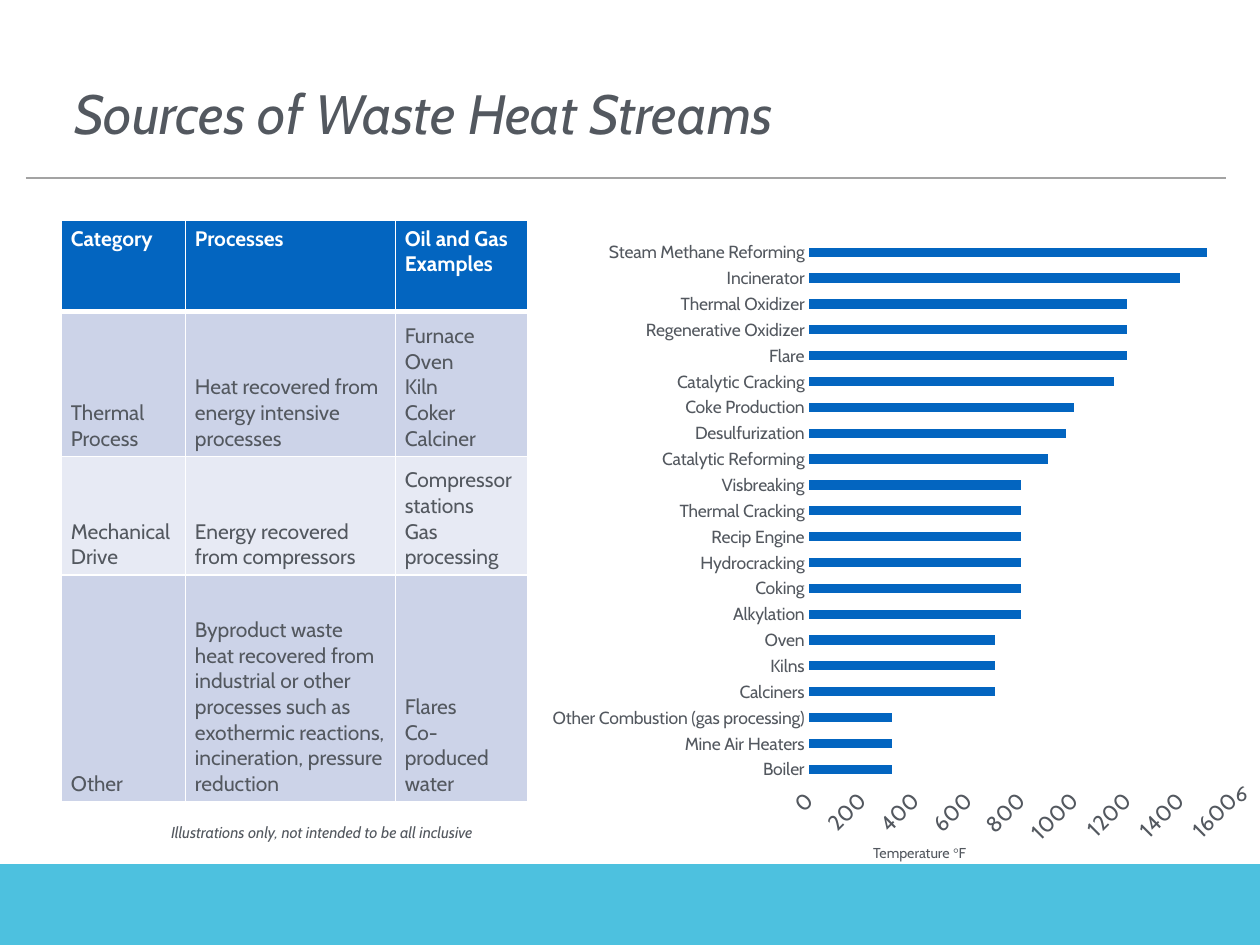
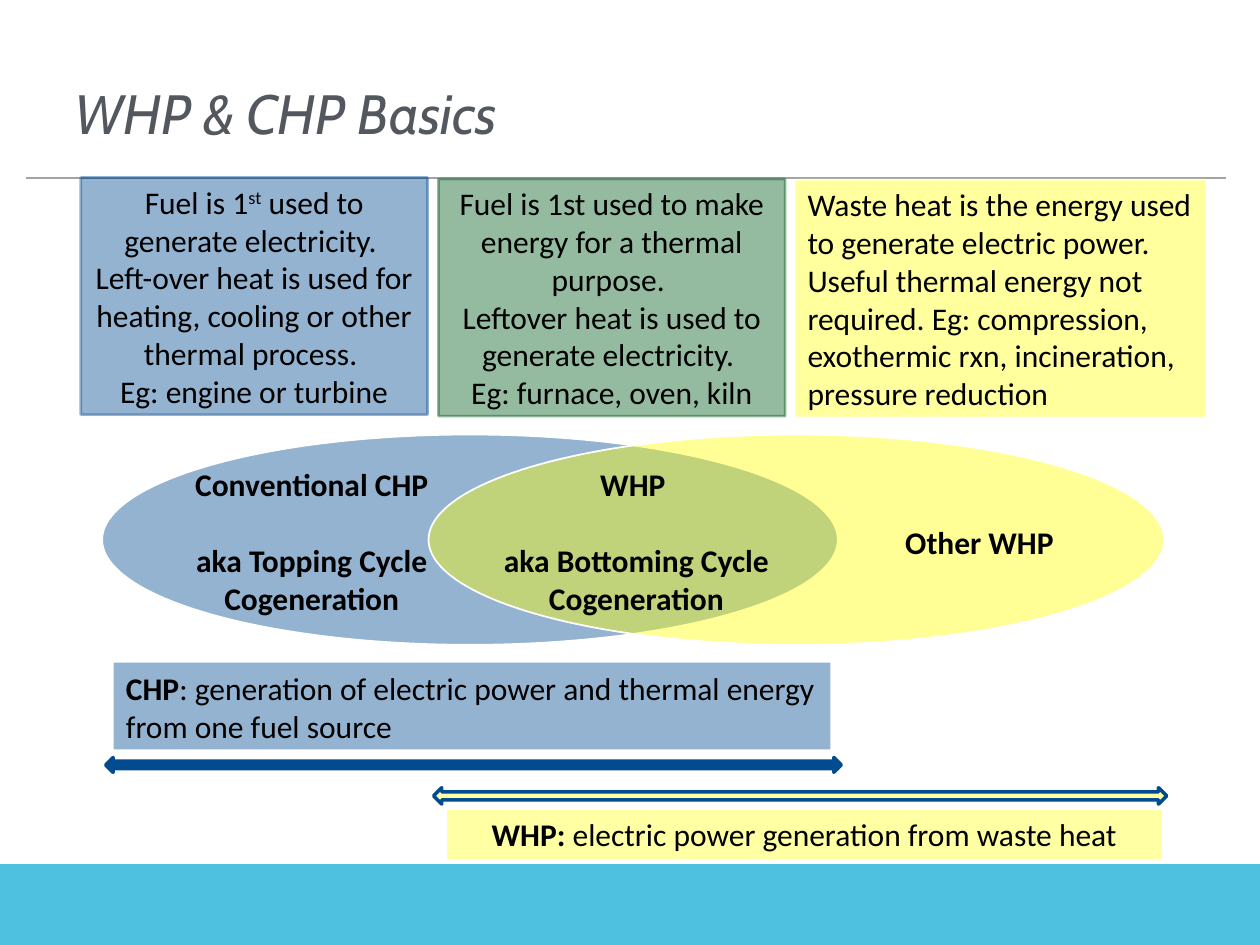
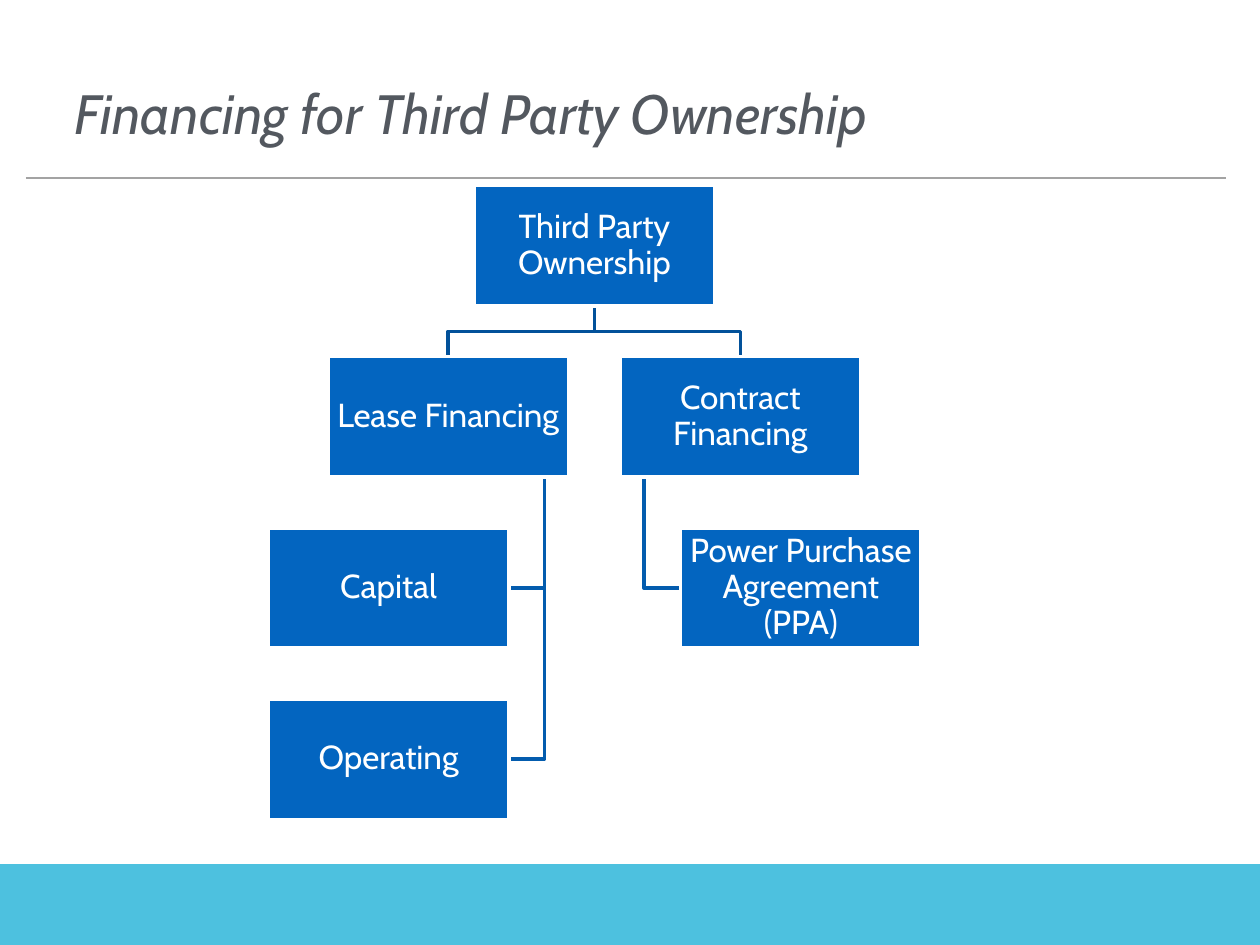
from dataclasses import dataclass
from typing import NamedTuple, Optional, Sequence, Union

from lxml.etree import SubElement
from pptx import Presentation
from pptx.chart.data import CategoryChartData
from pptx.dml.color import RGBColor
from pptx.enum.chart import XL_CHART_TYPE as ChartType, XL_TICK_MARK as TickMark
from pptx.enum.shapes import MSO_CONNECTOR as Connector, MSO_SHAPE as Preset
from pptx.enum.text import MSO_ANCHOR as Anchor, MSO_AUTO_SIZE as AutoSize, PP_ALIGN as Align
from pptx.oxml.ns import qn
from pptx.util import Cm, Pt

HEADING, BODY = "Cabin", "Calibri"
GREY, WHITE, BLACK = "53585F", "FFFFFF", "000000"
BLUE, NAVY, NAVY_LINE = "0365C0", "024C90", "024B8E"
GREEN, YELLOW = "005C1C", "FFFF00"
BAND, RULE = "4DC1DF", "A3A3A3"
TREE_TOP, TREE_SIDE = "02519A", "035CAE"
ROW_TINTS = ("CCD3E8", "E7EAF4")


class Run(NamedTuple):
    text: str
    bold: Optional[bool] = None
    font: Optional[str] = None
    raised: bool = False


Paragraphs = Sequence[Union[str, Sequence[Run]]]


class Box(NamedTuple):
    """Left, top, width and height in centimetres."""
    left: float
    top: float
    width: float
    height: float

    def lengths(self) -> list:
        return [Cm(value) for value in self]


@dataclass
class Panel:
    box: Box
    color: str
    opacity: int
    paragraphs: Paragraphs = ()
    preset: Preset = Preset.RECTANGLE
    line: Optional[str] = None
    line_width: float = 1
    line_opacity: int = 100
    align: Align = Align.CENTER
    anchor: Anchor = Anchor.MIDDLE


@dataclass
class Label:
    box: Box
    paragraphs: Paragraphs


@dataclass
class Node:
    text: str
    left: float
    level: int
    parent: Optional[str] = None


def rgb(color: str) -> RGBColor:
    return RGBColor.from_string(color)


def paint(fill, color: str, opacity: int = 100) -> None:
    fill.solid()
    fill.fore_color.rgb = rgb(color)
    if opacity < 100:
        color_element = fill._xPr.find(qn("a:solidFill"))[0]
        SubElement(color_element, qn("a:alpha"), val=str(opacity * 1000))


def outline(line, color: Optional[str], width: float = 1, opacity: int = 100) -> None:
    if color is None:
        line.fill.background()
        return
    paint(line.fill, color, opacity)
    line.width = Pt(width)


def write_text(frame, paragraphs: Paragraphs, *, size: float, font: str = HEADING,
               color: str = GREY, bold: bool = False, italic: bool = False,
               align: Align = Align.LEFT, anchor: Anchor = Anchor.TOP,
               line_spacing: float = 1.0, gap: float = 0) -> None:
    """Fill a text frame; gap is the space in points between paragraphs."""
    frame.word_wrap = True
    frame.vertical_anchor = anchor
    for index, content in enumerate(paragraphs):
        paragraph = frame.paragraphs[0] if index == 0 else frame.add_paragraph()
        paragraph.alignment = align
        paragraph.line_spacing = line_spacing
        paragraph.space_before = Pt(gap if index else 0)
        for part in [Run(content)] if isinstance(content, str) else content:
            run = paragraph.add_run()
            run.text = part.text
            run.font.name = part.font or font
            run.font.size = Pt(size)
            run.font.bold = bold if part.bold is None else part.bold
            run.font.italic = italic
            run.font.color.rgb = rgb(color)
            if part.raised:
                run._r.get_or_add_rPr().set("baseline", "30000")


def add_label(slide, box: Box, paragraphs: Paragraphs, **text_format) -> None:
    frame = slide.shapes.add_textbox(*box.lengths()).text_frame
    write_text(frame, paragraphs, **text_format)


def add_panel(slide, panel: Panel, **text_format):
    shape = slide.shapes.add_shape(panel.preset, *panel.box.lengths())
    shape.shadow.inherit = False
    paint(shape.fill, panel.color, panel.opacity)
    outline(shape.line, panel.line, panel.line_width, panel.line_opacity)
    if panel.paragraphs:
        write_text(shape.text_frame, panel.paragraphs, align=panel.align,
                   anchor=panel.anchor, **text_format)
    return shape


def add_titled_slide(presentation, title: str):
    """Add a slide with the shared title style, rule and bottom band."""
    slide = presentation.slides.add_slide(presentation.slide_layouts[5])
    add_panel(slide, Panel(Box(0, 17.42, 25.4, 1.63), BAND, 100))
    rule = slide.shapes.add_connector(Connector.STRAIGHT, Cm(0.52), Cm(3.59), Cm(24.71), Cm(3.59))
    outline(rule.line, RULE)
    SubElement(rule._element.spPr, qn("a:effectLst"))
    heading = slide.shapes.title
    heading.left, heading.top, heading.width, heading.height = Box(1.24, 1.04, 21.44, 2.44).lengths()
    heading.text_frame.auto_size = AutoSize.NONE
    write_text(heading.text_frame, [title], size=31.6, italic=True, anchor=Anchor.MIDDLE)
    return slide


# Sources of waste heat

TEMPERATURES = {
    "Boiler": 310, "Mine Air Heaters": 310, "Other Combustion (gas processing)": 310,
    "Calciners": 700, "Kilns": 700, "Oven": 700, "Alkylation": 800, "Coking": 800,
    "Hydrocracking": 800, "Recip Engine": 800, "Thermal Cracking": 800,
    "Visbreaking": 800, "Catalytic Reforming": 900, "Desulfurization": 970,
    "Coke Production": 1000, "Catalytic Cracking": 1150, "Flare": 1200,
    "Regenerative Oxidizer": 1200, "Thermal Oxidizer": 1200, "Incinerator": 1400,
    "Steam Methane Reforming": 1500,
}

SOURCE_ROWS = [
    (["Category"], ["Processes"], ["Oil and Gas Examples"]),
    (["Thermal Process"], ["Heat recovered from energy intensive processes"],
     ["Furnace Oven", "Kiln", "Coker", "Calciner"]),
    (["Mechanical Drive"], ["Energy recovered from compressors"],
     ["Compressor stations", "Gas processing"]),
    (["Other"],
     ["Byproduct waste heat recovered from industrial or other processes such as "
      "exothermic reactions, incineration, pressure reduction"],
     ["Flares", "Co-produced water"]),
]


def add_temperature_chart(slide, box: Box) -> None:
    data = CategoryChartData()
    data.categories = list(TEMPERATURES)
    data.add_series("Series 1", list(TEMPERATURES.values()))
    chart = slide.shapes.add_chart(ChartType.BAR_CLUSTERED, *box.lengths(), data).chart
    chart.has_legend = chart.has_title = False
    chart.font.name, chart.font.size = HEADING, Pt(12.5)
    chart.font.color.rgb = rgb(GREY)
    plot = chart.plots[0]
    plot.gap_width = 182
    plot.vary_by_categories = False
    paint(plot.series[0].format.fill, BLUE)

    categories, values = chart.category_axis, chart.value_axis
    # The longest category name must fit between the table and the bars.
    for axis, size in ((categories, 10), (values, 12.5)):
        axis.major_tick_mark = axis.minor_tick_mark = TickMark.NONE
        font = axis.tick_labels.font
        font.name, font.size = HEADING, Pt(size)
        font.color.rgb = rgb(GREY)
    outline(categories.format.line, WHITE, 0.75)
    outline(values.format.line, None)
    values.minimum_scale, values.maximum_scale, values.major_unit = 0, 1600, 200
    outline(values.major_gridlines.format.line, WHITE, 0.75)
    values._element.find(qn("c:txPr")).find(qn("a:bodyPr")).set("rot", "-2700000")

    skip = SubElement(categories._element, qn("c:tickLblSkip"), val="2")
    categories._element.find(qn("c:noMultiLvlLbl")).addprevious(skip)
    place_plot(chart, Box(0.44, 0.02, 0.53, 0.86))


def place_plot(chart, share: Box) -> None:
    """Fix the inner plot area as shares of the chart's size."""
    plot_area = chart._chartSpace.chart.plotArea
    layout = plot_area.find(qn("c:layout"))
    if layout is None:
        layout = SubElement(plot_area, qn("c:layout"))
        plot_area.insert(0, layout)
    manual = SubElement(layout, qn("c:manualLayout"))
    settings = {"layoutTarget": "inner", "xMode": "edge", "yMode": "edge",
                "x": share.left, "y": share.top, "w": share.width, "h": share.height}
    for name, value in settings.items():
        SubElement(manual, qn(f"c:{name}"), val=str(value))


def add_borders(cell, bottom_width: float) -> None:
    properties = cell._tc.get_or_add_tcPr()
    widths = {"lnL": 1, "lnR": 1, "lnT": 1, "lnB": bottom_width}
    for index, (name, width) in enumerate(widths.items()):
        border = SubElement(properties, qn(f"a:{name}"), w=str(Pt(width)))
        SubElement(SubElement(border, qn("a:solidFill")), qn("a:srgbClr"), val=WHITE)
        properties.insert(index, border)


def add_source_table(slide, box: Box) -> None:
    column_widths, row_heights = (2.5, 4.23, 2.67), (1.83, 2.92, 2.39, 4.57)
    table = slide.shapes.add_table(len(row_heights), len(column_widths), *box.lengths()).table
    for column, width in zip(table.columns, column_widths):
        column.width = Cm(width)
    for row_index, (row, height, contents) in enumerate(zip(table.rows, row_heights, SOURCE_ROWS)):
        row.height = Cm(height)
        header = row_index == 0
        for cell, paragraphs in zip(row.cells, contents):
            cell.margin_left = cell.margin_right = Cm(0.19)
            cell.margin_top = cell.margin_bottom = Cm(0.1)
            write_text(cell.text_frame, paragraphs, size=12, bold=header,
                       color=WHITE if header else GREY)
            cell.vertical_anchor = Anchor.TOP if header else Anchor.BOTTOM
            paint(cell.fill, BLUE if header else ROW_TINTS[(row_index - 1) % 2])
            add_borders(cell, 3 if header else 1)


def build_sources(presentation) -> None:
    slide = add_titled_slide(presentation, "Sources of Waste Heat Streams")
    add_label(slide, Box(19.69, 15.62, 5.71, 0.76), ["6"], size=12, align=Align.RIGHT)
    add_label(slide, Box(3.2, 16.46, 7.72, 0.64),
              ["Illustrations only, not intended to be all inclusive"], size=9, italic=True)
    add_temperature_chart(slide, Box(9.22, 4.57, 16.13, 12.73))
    add_source_table(slide, Box(1.24, 4.45, 9.4, 11.71))
    add_label(slide, Box(17.35, 16.89, 2.64, 0.61),
              [[Run("Temperature "), Run("°", font="Times New Roman"), Run("F")]], size=8.2)


# WHP and CHP basics

VENN_PANELS = [
    Panel(Box(2.29, 13.36, 14.45, 1.75), NAVY, 42,
          [[Run("CHP", bold=True),
            Run(": generation of electric power and thermal energy from one fuel source")]],
          align=Align.LEFT, anchor=Anchor.TOP),
    Panel(Box(2.06, 8.76, 14.83, 4.24), NAVY, 42, preset=Preset.OVAL, line=WHITE),
    Panel(Box(8.64, 8.76, 14.83, 4.24), YELLOW, 41, preset=Preset.OVAL, line=WHITE),
]

VENN_LABELS = [
    Label(Box(2.97, 9.78, 6.63, 2.24), ["Conventional CHP", "aka Topping Cycle Cogeneration"]),
    Label(Box(9.3, 9.78, 7.06, 2.24), ["WHP ", "aka Bottoming Cycle Cogeneration"]),
    Label(Box(16.89, 10.57, 5.71, 0.69), ["Other WHP"]),
]

SPAN_AND_NOTE_PANELS = [
    Panel(Box(2.13, 15.27, 14.83, 0.3), NAVY, 100, preset=Preset.LEFT_RIGHT_ARROW,
          line=NAVY_LINE, line_width=2),
    Panel(Box(8.74, 15.88, 14.78, 0.33), YELLOW, 36, preset=Preset.LEFT_RIGHT_ARROW,
          line=NAVY_LINE, line_width=2),
    Panel(Box(8.84, 3.61, 6.99, 4.78), GREEN, 42,
          ["Fuel is 1st used to make energy for a thermal purpose. ",
           "Leftover heat is used to generate electricity. ",
           "Eg: furnace, oven, kiln"],
          line=GREEN, line_width=1.5, line_opacity=42),
    Panel(Box(16.03, 3.63, 8.28, 4.78), YELLOW, 38,
          ["Waste heat is the energy used to generate electric power. Useful thermal "
           "energy not required. Eg: compression, exothermic rxn, incineration, "
           "pressure reduction"],
          line=WHITE, line_width=1.5, line_opacity=32, align=Align.LEFT),
    Panel(Box(1.63, 3.58, 6.99, 4.78), NAVY, 42,
          [[Run("Fuel is 1"), Run("st", raised=True), Run(" used to generate electricity. ")],
           "Left-over heat is used for heating, cooling or other thermal process. ",
           "Eg: engine or turbine"],
          line=NAVY, line_width=1.5, line_opacity=42),
    Panel(Box(8.99, 16.31, 14.45, 1.02), YELLOW, 36,
          [[Run("WHP: ", bold=True), Run("electric power generation from waste heat")]],
          line=WHITE, line_width=0.75, anchor=Anchor.TOP),
]


def build_basics(presentation) -> None:
    slide = add_titled_slide(presentation, "WHP & CHP Basics")
    body = dict(size=18, font=BODY, color=BLACK)
    for panel in VENN_PANELS:
        add_panel(slide, panel, **body)
    for label in VENN_LABELS:
        add_label(slide, label.box, label.paragraphs, bold=True, align=Align.CENTER,
                  anchor=Anchor.MIDDLE, gap=22, **body)
    for panel in SPAN_AND_NOTE_PANELS:
        add_panel(slide, panel, **body)


# Third party ownership

NODE_WIDTH, NODE_HEIGHT = 4.85, 2.43
TREE_START, LEVEL_PITCH = 3.74, 3.45
NODES = [
    Node("Third Party Ownership", 9.56, 0),
    Node("Lease Financing", 6.61, 1, "Third Party Ownership"),
    Node("Capital", 5.41, 2, "Lease Financing"),
    Node("Operating", 5.41, 3, "Lease Financing"),
    Node("Contract Financing", 12.5, 1, "Third Party Ownership"),
    Node("Power Purchase Agreement (PPA)", 13.72, 2, "Contract Financing"),
]


def node_top(node: Node) -> float:
    return TREE_START + node.level * LEVEL_PITCH


def branch_points(parent: Node, child: Node) -> list:
    """Corners of the line from a parent to its child, in centimetres."""
    start_y = node_top(parent) + NODE_HEIGHT
    if parent.parent is None:
        start_x, end_x = parent.left + NODE_WIDTH / 2, child.left + NODE_WIDTH / 2
        end_y = node_top(child)
        middle_y = (start_y + end_y) / 2
        return [(start_x, start_y), (start_x, middle_y), (end_x, middle_y), (end_x, end_y)]
    hangs_left = child.left < parent.left
    trunk_x = parent.left + NODE_WIDTH * (0.9 if hangs_left else 0.1)
    end_x = child.left + (NODE_WIDTH if hangs_left else 0)
    end_y = node_top(child) + NODE_HEIGHT / 2
    return [(trunk_x, start_y), (trunk_x, end_y), (end_x, end_y)]


def add_branch(slide, parent: Node, child: Node) -> None:
    start, *corners = [(Cm(x), Cm(y)) for x, y in branch_points(parent, child)]
    builder = slide.shapes.build_freeform(*start)
    builder.add_line_segments(corners, close=False)
    branch = builder.convert_to_shape()
    branch.shadow.inherit = False
    branch.fill.background()
    outline(branch.line, TREE_TOP if parent.parent is None else TREE_SIDE, 2)


def add_node(slide, node: Node) -> None:
    box = Box(node.left, node_top(node), NODE_WIDTH, NODE_HEIGHT)
    shape = add_panel(slide, Panel(box, BLUE, 100, line=WHITE, line_width=2))
    frame = shape.text_frame
    frame.margin_left = frame.margin_right = frame.margin_top = frame.margin_bottom = Cm(0.03)
    write_text(frame, [node.text], size=19, color=WHITE, align=Align.CENTER,
               anchor=Anchor.MIDDLE, line_spacing=0.9)


def build_financing(presentation) -> None:
    slide = add_titled_slide(presentation, "Financing for Third Party Ownership")
    by_name = {node.text: node for node in NODES}
    for node in NODES:
        if node.parent:
            add_branch(slide, by_name[node.parent], node)
    for node in NODES:
        add_node(slide, node)


def main() -> None:
    presentation = Presentation()
    presentation.slide_width, presentation.slide_height = Cm(25.4), Cm(19.05)
    build_sources(presentation)
    build_basics(presentation)
    build_financing(presentation)
    presentation.save("out.pptx")


if __name__ == "__main__":
    main()
